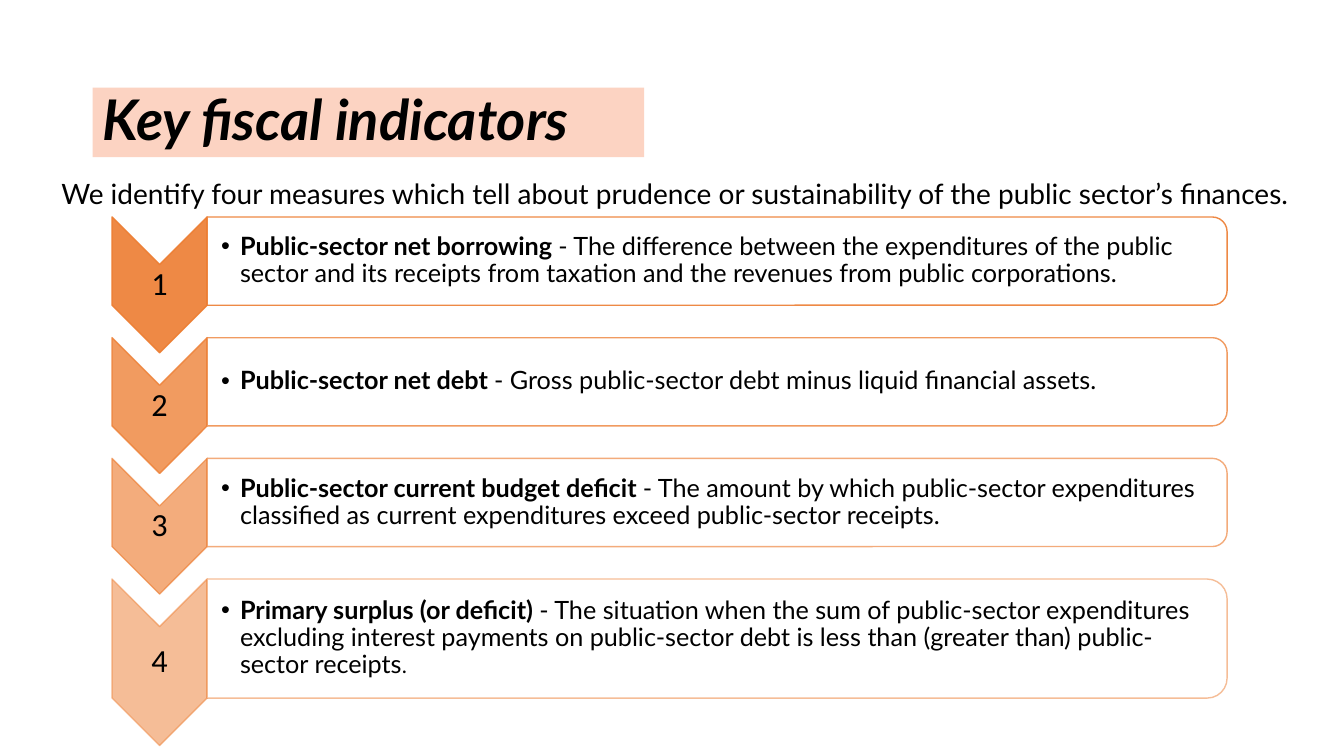
from lxml import etree
from pptx import Presentation
from pptx.dml.color import RGBColor
from pptx.enum.shapes import MSO_SHAPE
from pptx.enum.text import MSO_ANCHOR, MSO_AUTO_SIZE, PP_ALIGN
from pptx.oxml.ns import qn
from pptx.util import Pt

ORANGE = RGBColor(0xED, 0x7D, 0x31)
PEACH = RGBColor(0xFC, 0xD3, 0xC2)
WHITE = RGBColor(0xFF, 0xFF, 0xFF)
BLACK = RGBColor(0x00, 0x00, 0x00)
CHEVRON, CARD = MSO_SHAPE.CHEVRON, MSO_SHAPE.ROUND_2_SAME_RECTANGLE
MIDDLE = MSO_ANCHOR.MIDDLE
LEFT, CENTER = PP_ALIGN.LEFT, PP_ALIGN.CENTER
NO_AUTOFIT = MSO_AUTO_SIZE.NONE

CHEVRON_LEFT, CHEVRON_WIDTH, CHEVRON_TIP = 80, 68, 34
CARD_LEFT, CARD_WIDTH = 148, 728.5
FIRST_TOP, ROW_STEP = 155, 86.2

# Term, definition, card height, opacity of the orange in percent
INDICATORS = [
    ("Public-sector net borrowing ",
     "- The difference between the expenditures of the public sector and its "
     "receipts from taxation and the revenues from public corporations.", 63, 90),
    ("Public-sector net debt ",
     "- Gross public-sector debt minus liquid financial assets.", 63, 77),
    ("Public-sector current budget deficit ",
     "- The amount by which public-sector expenditures classified as current "
     "expenditures exceed public-sector receipts.", 63, 63),
    ("Primary surplus (or deficit) ",
     "- The situation when the sum of public-sector expenditures excluding "
     "interest payments on public-sector debt is less than (greater than) "
     "public-sector receipts", 85, 50),
]


def write(para, text, size=18, font="Lato", bold=False, italic=False):
    span = para.add_run()
    span.text = text
    span.font.size = Pt(size)
    span.font.name = font
    span.font.bold = bold
    span.font.italic = italic
    span.font.color.rgb = BLACK


def add_turned_shape(kind, left, top, width, height, fill, fill_opacity, line_opacity):
    """Add a shape turned by 90 degrees that shows in the given frame."""
    shape = page.shapes.add_shape(
        kind, Pt(left + (width - height) / 2), Pt(top + (height - width) / 2),
        Pt(height), Pt(width))
    shape.rotation = 90
    shape.shadow.inherit = False
    shape.fill.solid()
    shape.fill.fore_color.rgb = fill
    shape.line.color.rgb = ORANGE
    shape.line.width = Pt(1)
    colours = shape._element.spPr.iter(qn("a:srgbClr"))
    for colour, opacity in zip(colours, (fill_opacity, line_opacity)):
        etree.SubElement(colour, qn("a:alpha"), val=str(opacity * 1000))
    return shape


deck = Presentation()
deck.slide_width, deck.slide_height = Pt(960), Pt(540)
page = deck.slides.add_slide(deck.slide_layouts[5])

title = page.shapes.title
title.left, title.top, title.width, title.height = Pt(66.2), Pt(62.6), Pt(394), Pt(49.7)
title.fill.solid()
title.fill.fore_color.rgb = PEACH
title.text_frame.auto_size = NO_AUTOFIT
title.text_frame.vertical_anchor = MIDDLE
para = title.text_frame.paragraphs[0]
para.alignment = LEFT
para.line_spacing = 0.9
write(para, "Key fiscal indicators", size=40, bold=True, italic=True)

intro = page.shapes.add_textbox(Pt(36.7), Pt(120.2), Pt(912.2), Pt(366.5))
intro.text_frame.word_wrap = True
para = intro.text_frame.paragraphs[0]
para.line_spacing = 1.1
write(para, "We identify four measures which tell about prudence or sustainability "
            "of the public sector’s finances.", size=20)

for index, (term, definition, card_height, opacity) in enumerate(INDICATORS):
    top = FIRST_TOP + index * ROW_STEP
    chevron_height = card_height + CHEVRON_TIP
    chevron = add_turned_shape(CHEVRON, CHEVRON_LEFT, top, CHEVRON_WIDTH,
                               chevron_height, ORANGE, opacity, opacity)
    chevron.adjustments[0] = 0.5
    card = add_turned_shape(CARD, CARD_LEFT, top, CARD_WIDTH, card_height,
                            WHITE, 90, opacity)
    card.adjustments[0] = 0.167

    number_box = page.shapes.add_textbox(
        Pt(CHEVRON_LEFT), Pt(top + CHEVRON_TIP), Pt(CHEVRON_WIDTH),
        Pt(chevron_height - 2 * CHEVRON_TIP))
    definition_box = page.shapes.add_textbox(
        Pt(CARD_LEFT), Pt(top + 3), Pt(725.5), Pt(card_height - 6))
    for box, left_margin in ((number_box, 1), (definition_box, 10)):
        frame = box.text_frame
        frame.word_wrap = True
        frame.vertical_anchor = MIDDLE
        frame.margin_left = Pt(left_margin)
        frame.margin_top = frame.margin_right = frame.margin_bottom = Pt(1)
        frame.paragraphs[0].line_spacing = 0.9

    para = number_box.text_frame.paragraphs[0]
    para.alignment = CENTER
    write(para, str(index + 1), size=23, font="Calibri")

    para = definition_box.text_frame.paragraphs[0]
    para.level = 1
    properties = para._p.get_or_add_pPr()
    properties.set("marL", str(Pt(13.5)))
    properties.set("indent", str(-Pt(13.5)))
    bullet_colour = etree.SubElement(properties, qn("a:buClr"))
    etree.SubElement(bullet_colour, qn("a:srgbClr"), val=str(BLACK))
    etree.SubElement(properties, qn("a:buFont"), typeface="Arial")
    etree.SubElement(properties, qn("a:buChar"), char="•")
    write(para, term, bold=True)
    write(para, definition)

# The last definition ends with a smaller full stop
write(para, ".", size=16, font="Calibri")

deck.save("out.pptx")
